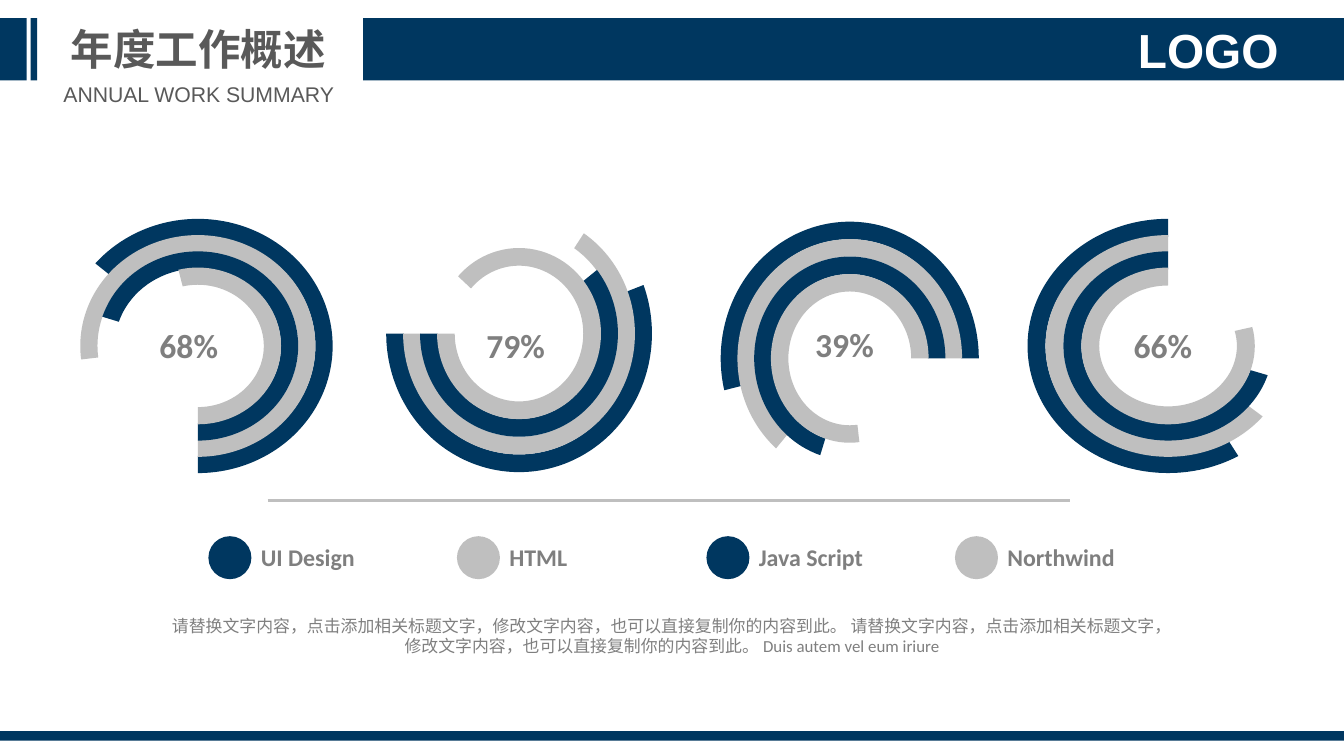
"""Build the annual work summary slide with four ring gauges and a legend."""
from dataclasses import dataclass
from math import atan2, cos, degrees, radians, sin

from pptx import Presentation
from pptx.dml.color import RGBColor
from pptx.enum.shapes import MSO_CONNECTOR as CONN, MSO_SHAPE as SHAPE
from pptx.enum.text import MSO_ANCHOR as ANCHOR, MSO_AUTO_SIZE as AUTO, PP_ALIGN as ALIGN
from pptx.oxml.xmlchemy import OxmlElement
from pptx.shapes.autoshape import Shape
from pptx.shapes.shapetree import GroupShapes, SlideShapes
from pptx.util import Emu, Pt

Shapes = SlideShapes | GroupShapes

NAVY = RGBColor(0x00, 0x37, 0x60)
SILVER = RGBColor(0xBF, 0xBF, 0xBF)
GRAY = RGBColor(0x7F, 0x7F, 0x7F)
DARK = RGBColor(0x59, 0x59, 0x59)
WHITE = RGBColor(0xFF, 0xFF, 0xFF)
RING_COLORS = (NAVY, SILVER, NAVY, SILVER)
EMU_PER_PX = 9144
ADJUST_PER_DEGREE = 0.6


@dataclass(frozen=True)
class Box:
    x: float
    y: float
    w: float
    h: float


@dataclass(frozen=True)
class Style:
    size: float
    color: RGBColor
    font: str = "Calibri"
    bold: bool = True
    align: ALIGN = ALIGN.LEFT
    anchor: ANCHOR = ANCHOR.TOP
    wrap: bool = True
    inset: tuple[int, int] = (10, 5)


@dataclass(frozen=True)
class Gauge:
    """Rings from outside in: all leave the start angle and turn back to their own end."""
    label: str
    label_box: Box
    center: tuple[int, int]
    outer: tuple[int, int]
    inner: tuple[int, int]
    start: int
    ends: tuple[float, ...]


@dataclass(frozen=True)
class LegendItem:
    label: str
    width: int
    color: RGBColor


GAUGES = (
    Gauge("68%", Box(157, 335, 135, 53), (207, 362), (141, 133), (69, 65),
          90, (-139.5, -187, -162, -103.5)),
    Gauge("79%", Box(499, 335, 132, 53), (543, 349), (139, 145), (68, 71),
          180, (-20.5, -56, -38, -138)),
    Gauge("39%", Box(843, 334, 128, 53), (889, 375), (135, 143), (65, 70),
          0, (-193.5, -229, -252, -277)),
    Gauge("66%", Box(1176, 335, 139, 53), (1222, 362), (147, 133), (72, 65),
          -90, (-300, -320.5, -342, -374)),
)
LEGEND = (
    LegendItem("UI Design", 119, NAVY),
    LegendItem("HTML", 81, SILVER),
    LegendItem("Java Script", 130, NAVY),
    LegendItem("Northwind", 133, SILVER),
)
BARS = (Box(380, 19, 1026, 65), Box(0, 19, 28, 65), Box(32, 19, 7, 65), Box(0, 765, 1406, 10))
BODY = ("请替换文字内容，点击添加相关标题文字，修改文字内容，也可以直接复制你的内容到此。 "
        "请替换文字内容，点击添加相关标题文字，修改文字内容，也可以直接复制你的内容到此。 "
        "Duis autem vel eum iriure")

PERCENT = Style(25.3, GRAY)
LEGEND_TEXT = Style(18, GRAY, wrap=False)
BODY_TEXT = Style(12.7, GRAY, bold=False, align=ALIGN.CENTER)
TITLE = Style(32, DARK, "Arial", align=ALIGN.CENTER, wrap=False)
SUBTITLE = Style(16, DARK, "Arial", bold=False, align=ALIGN.CENTER, wrap=False)
LOGO = Style(36, WHITE, "Arial", align=ALIGN.CENTER, anchor=ANCHOR.BOTTOM, inset=(0, 0))


def px(value: float) -> Emu:
    return Emu(round(value * EMU_PER_PX))


def place(box: Box) -> tuple[Emu, Emu, Emu, Emu]:
    return px(box.x), px(box.y), px(box.w), px(box.h)


def write(sp: Shape, text: str, style: Style) -> None:
    tf = sp.text_frame
    tf.word_wrap = style.wrap
    tf.auto_size = AUTO.SHAPE_TO_FIT_TEXT
    tf.vertical_anchor = style.anchor
    tf.margin_left = tf.margin_right = px(style.inset[0])
    tf.margin_top = tf.margin_bottom = px(style.inset[1])
    p = tf.paragraphs[0]
    p.alignment = style.align
    r = p.add_run()
    r.text = text
    r.font.name = style.font
    r.font.size = Pt(style.size)
    r.font.bold = style.bold
    r.font.color.rgb = style.color


def add_text(shapes: Shapes, box: Box, text: str, style: Style) -> None:
    write(shapes.add_textbox(*place(box)), text, style)


def add_solid(shapes: Shapes, kind: SHAPE, box: Box, color: RGBColor) -> Shape:
    sp = shapes.add_shape(kind, *place(box))
    sp.shadow.inherit = False
    sp.fill.solid()
    sp.fill.fore_color.rgb = color
    sp.line.fill.background()
    return sp


def arc_adjust(angle: float, rx: float, ry: float) -> float:
    """Turn an ellipse parameter in degrees into a block arc adjustment."""
    t = radians(angle)
    return degrees(atan2(ry * sin(t), rx * cos(t))) % 360 * ADJUST_PER_DEGREE


def add_gauge(shapes: SlideShapes, gauge: Gauge) -> None:
    group = shapes.add_group_shape().shapes
    cx, cy = gauge.center
    step_x, step_y = ((o - i) / len(RING_COLORS) for o, i in zip(gauge.outer, gauge.inner))
    for level, (end, color) in enumerate(zip(gauge.ends, RING_COLORS)):
        rx = gauge.outer[0] - level * step_x
        ry = gauge.outer[1] - level * step_y
        ring = add_solid(group, SHAPE.BLOCK_ARC, Box(cx - rx, cy - ry, 2 * rx, 2 * ry), color)
        ring.adjustments[0] = arc_adjust(end, rx, ry)
        ring.adjustments[1] = arc_adjust(gauge.start, rx, ry)
        ring.adjustments[2] = max(step_x, step_y) / (2 * min(rx, ry))
    add_text(group, gauge.label_box, gauge.label, PERCENT)


def add_legend_item(shapes: SlideShapes, x: int, item: LegendItem) -> None:
    group = shapes.add_group_shape().shapes
    add_solid(group, SHAPE.OVAL, Box(x, 561, 45, 45), item.color)
    add_text(group, Box(x + 45, 563, item.width, 40), item.label, LEGEND_TEXT)


def add_divider(shapes: SlideShapes) -> None:
    line = shapes.add_connector(CONN.STRAIGHT, px(280), px(524), px(1119), px(524))
    line.line.color.rgb = SILVER
    line.line.width = Pt(2)
    line.element.spPr.append(OxmlElement("a:effectLst"))


def main() -> None:
    prs = Presentation()
    prs.slide_width, prs.slide_height = px(1406), px(791)
    s = prs.slides.add_slide(prs.slide_layouts[5])
    shapes = s.shapes
    for gauge in GAUGES:
        add_gauge(shapes, gauge)
    add_divider(shapes)
    for i, item in enumerate(LEGEND):
        add_legend_item(shapes, 218 + round(i * 260.4), item)
    add_text(shapes, Box(167, 639, 1072, 53), BODY, BODY_TEXT)
    for bar in BARS:
        add_solid(shapes, SHAPE.RECTANGLE, bar, NAVY)
    title = shapes.title
    title.left, title.top, title.width, title.height = place(Box(63, 19, 289, 64))
    write(title, "年度工作概述", TITLE)
    add_text(shapes, Box(1160, 21, 208, 61), "LOGO", LOGO)
    add_text(shapes, Box(55, 80, 306, 37), "ANNUAL WORK SUMMARY", SUBTITLE)
    prs.save("out.pptx")


if __name__ == "__main__":
    main()
